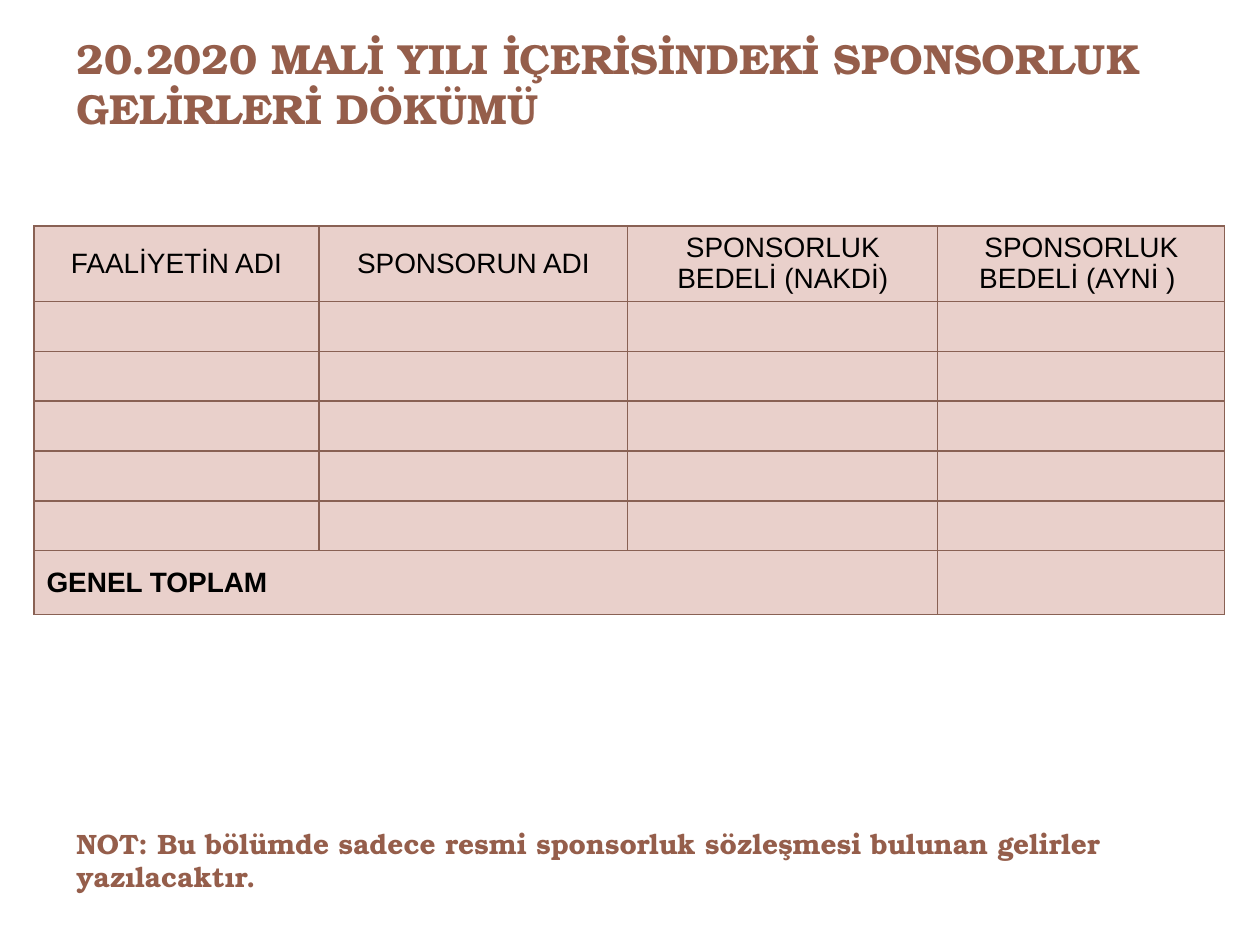
"""Build a slide with a table of sponsorship income."""
from lxml.etree import SubElement
from pptx import Presentation
from pptx.dml.color import RGBColor
from pptx.enum.text import MSO_ANCHOR, PP_ALIGN
from pptx.oxml.ns import qn
from pptx.util import Emu, Pt

EMU_PER_PX = 914400 // 126
BROWN = "955E4B"
BORDER = "896154"
CELL_FILL = "E9D0CB"
BLACK = "000000"
HEADINGS = [
    "FAALİYETİN ADI",
    "SPONSORUN ADI",
    "SPONSORLUK BEDELİ (NAKDİ)",
    "SPONSORLUK BEDELİ (AYNİ ) ",
]
COLUMN_WIDTHS = [285, 309, 310, 287]
ROW_HEIGHTS = [75] + [50] * 5 + [64]


def px(length):
    """Turn whole pixels into EMU."""
    return Emu(length * EMU_PER_PX)


def color(value):
    """Turn a hex string into a colour."""
    return RGBColor.from_string(value)


def format_text(frame, font, size, ink, bold):
    """Apply one font to every run of a text frame."""
    for para in frame.paragraphs:
        for span in para.runs:
            span.font.name = font
            span.font.size = Pt(size)
            span.font.bold = bold
            span.font.color.rgb = color(ink)


def add_text(page, text, left, top, width, height, size):
    """Add a bold brown text box that wraps."""
    box = page.shapes.add_textbox(px(left), px(top), px(width), px(height))
    frame = box.text_frame
    frame.word_wrap = True
    frame.text = text
    format_text(frame, "TeX Gyre Bonum", size, BROWN, True)


def add_borders(cell):
    """Draw a thin line on all four sides of a cell."""
    properties = cell._tc.get_or_add_tcPr()
    for position, side in enumerate(("a:lnL", "a:lnR", "a:lnT", "a:lnB")):
        line = SubElement(properties, qn(side), w=str(Pt(0.75)))
        fill = SubElement(line, qn("a:solidFill"))
        SubElement(fill, qn("a:srgbClr"), val=BORDER)
        properties.insert(position, line)


def style_cell(cell):
    """Give a cell its fill, borders, margins and anchor."""
    cell.fill.solid()
    cell.fill.fore_color.rgb = color(CELL_FILL)
    cell.margin_top = cell.margin_bottom = px(4)
    cell.vertical_anchor = MSO_ANCHOR.MIDDLE
    add_borders(cell)


def fill_cell(cell, text, bold=False, align=PP_ALIGN.LEFT):
    """Write formatted text into a cell."""
    cell.text_frame.text = text
    cell.text_frame.paragraphs[0].alignment = align
    format_text(cell.text_frame, "Arial", 16, BLACK, bold)


def add_income_table(page, left, top):
    """Add the income table with its headings and total row."""
    frame = page.shapes.add_table(
        len(ROW_HEIGHTS), len(COLUMN_WIDTHS), px(left), px(top),
        px(sum(COLUMN_WIDTHS)), px(sum(ROW_HEIGHTS)),
    )
    table = frame.table
    table.first_row = table.horz_banding = False
    for column, width in zip(table.columns, COLUMN_WIDTHS):
        column.width = px(width)
    for row, height in zip(table.rows, ROW_HEIGHTS):
        row.height = px(height)
    for cell in table.iter_cells():
        style_cell(cell)
    for index, heading in enumerate(HEADINGS):
        fill_cell(table.cell(0, index), heading, align=PP_ALIGN.CENTER)
    last = len(ROW_HEIGHTS) - 1
    total = table.cell(last, 0)
    total.merge(table.cell(last, 2))
    fill_cell(total, "GENEL TOPLAM", bold=True)


def main():
    """Build and save the deck."""
    deck = Presentation()
    deck.slide_width, deck.slide_height = px(1260), px(945)
    page = deck.slides.add_slide(deck.slide_layouts[6])
    add_text(page, "20.2020 MALİ YILI İÇERİSİNDEKİ SPONSORLUK GELİRLERİ DÖKÜMÜ",
             64, 26, 1134, 158, 24)
    add_income_table(page, 34, 226)
    add_text(page, "NOT: Bu bölümde sadece resmi sponsorluk sözleşmesi "
             "bulunan gelirler yazılacaktır.", 64, 820, 1134, 92, 16)
    deck.save("out.pptx")


if __name__ == "__main__":
    main()
